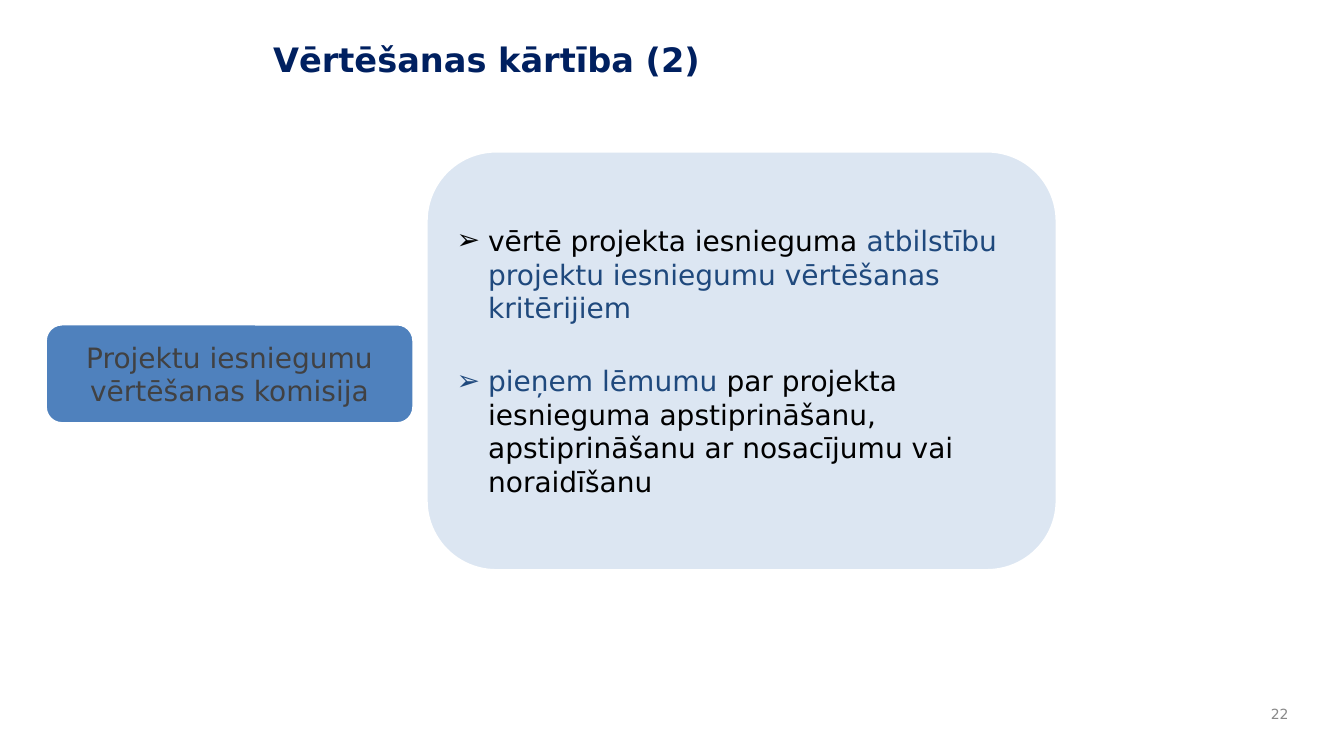
from lxml.etree import SubElement
from pptx import Presentation
from pptx.dml.color import RGBColor
from pptx.enum.shapes import MSO_SHAPE
from pptx.enum.text import MSO_ANCHOR, PP_ALIGN
from pptx.oxml.ns import qn
from pptx.util import Pt

WHITE = RGBColor(0xFF, 0xFF, 0xFF)
BLACK = RGBColor(0x00, 0x00, 0x00)
NAVY = RGBColor(0x00, 0x20, 0x60)
BLUE = RGBColor(0x4F, 0x81, 0xBD)
PALE_BLUE = RGBColor(0xDC, 0xE6, 0xF2)
EMPHASIS = RGBColor(0x1F, 0x49, 0x7D)
DARK_GREY = RGBColor(0x41, 0x41, 0x42)
GREY = RGBColor(0x89, 0x89, 0x89)


class SlideBuilder:
    FONT = "DejaVu Sans"
    BULLET = "➢"
    BULLET_INDENT = Pt(22.5)

    def __init__(self, presentation):
        self.slide = presentation.slides.add_slide(presentation.slide_layouts[6])

    def add_run(self, paragraph, text, color, size, bold=False):
        run = paragraph.add_run()
        run.text = text
        formats = {"name": self.FONT, "size": Pt(size), "bold": bold}
        for attribute, value in formats.items():
            setattr(run.font, attribute, value)
        run.font.color.rgb = color

    def set_frame(self, shape, anchor):
        formats = {"word_wrap": True, "vertical_anchor": anchor}
        for attribute, value in formats.items():
            setattr(shape.text_frame, attribute, value)
        return shape.text_frame

    def label(self, box, text, color, size, align=PP_ALIGN.LEFT,
              anchor=MSO_ANCHOR.TOP, bold=False):
        frame = self.set_frame(self.slide.shapes.add_textbox(*map(Pt, box)), anchor)
        frame.paragraphs[0].alignment = align
        self.add_run(frame.paragraphs[0], text, color, size, bold)

    def panel(self, box, fill):
        """Add a rounded panel and return its text frame."""
        shape = self.slide.shapes.add_shape(MSO_SHAPE.ROUNDED_RECTANGLE, *map(Pt, box))
        shape.shadow.inherit = False
        shape.fill.solid()
        shape.fill.fore_color.rgb = fill
        shape.line.color.rgb = WHITE
        shape.line.width = Pt(2)
        return self.set_frame(shape, MSO_ANCHOR.MIDDLE)

    def role(self, box, text):
        paragraph = self.panel(box, BLUE).paragraphs[0]
        paragraph.alignment = PP_ALIGN.CENTER
        self.add_run(paragraph, text, DARK_GREY, 20)

    def duties(self, box, items, gap):
        frame = self.panel(box, PALE_BLUE)
        for index, parts in enumerate(items):
            paragraph = frame.add_paragraph() if index else frame.paragraphs[0]
            paragraph.alignment = PP_ALIGN.LEFT
            if index:
                paragraph.space_before = Pt(gap)
            self.add_bullet(paragraph)
            for text, color in parts:
                self.add_run(paragraph, text, color, 20)

    def add_bullet(self, paragraph):
        properties = paragraph._p.get_or_add_pPr()
        properties.set("marL", str(self.BULLET_INDENT))
        properties.set("indent", str(-self.BULLET_INDENT))
        SubElement(properties, qn("a:buFont"), typeface=self.FONT)
        SubElement(properties, qn("a:buChar"), char=self.BULLET)


def main():
    presentation = Presentation()
    presentation.slide_width = Pt(960)
    presentation.slide_height = Pt(540)

    builder = SlideBuilder(presentation)
    builder.label((188, 24, 716, 84), "Vērtēšanas kārtība (2)", NAVY, 24, bold=True)
    builder.role((32.5, 231.5, 263, 71), "Projektu iesniegumu vērtēšanas komisija")
    duties = [
        [("vērtē projekta iesnieguma ", BLACK),
         ("atbilstību projektu iesniegumu vērtēšanas kritērijiem", EMPHASIS)],
        [("pieņem lēmumu ", EMPHASIS),
         ("par projekta iesnieguma apstiprināšanu, apstiprināšanu ar "
          "nosacījumu vai noraidīšanu", BLACK)],
    ]
    builder.duties((304.5, 108, 450.5, 299.5), duties, gap=28)
    builder.label((895.5, 498, 32, 24), "22", GREY, 10,
                  align=PP_ALIGN.RIGHT, anchor=MSO_ANCHOR.MIDDLE)

    presentation.save("out.pptx")


if __name__ == "__main__":
    main()
